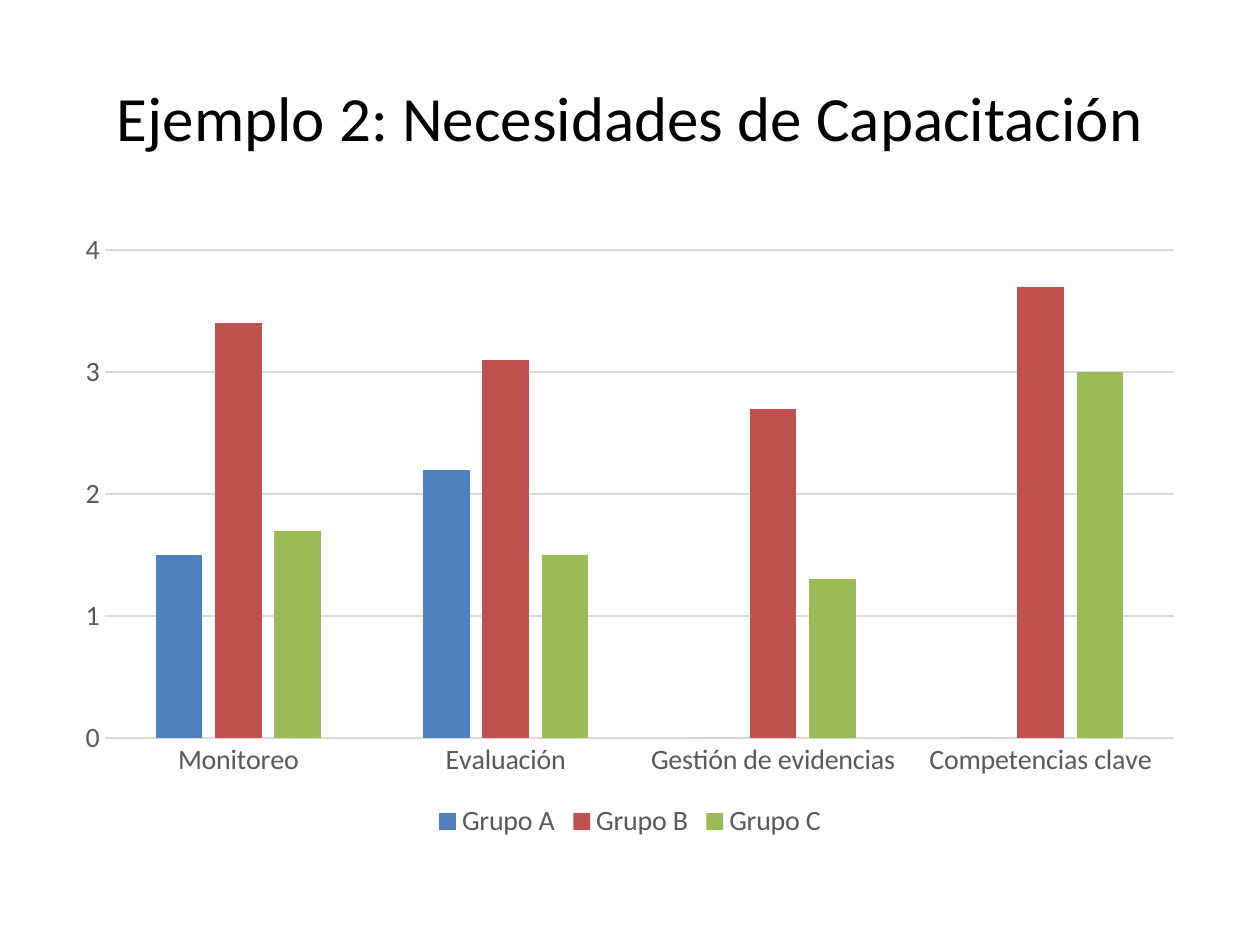
from pptx import Presentation
from pptx.chart.data import CategoryChartData
from pptx.dml.color import RGBColor
from pptx.enum.chart import XL_CHART_TYPE, XL_LEGEND_POSITION, XL_TICK_MARK
from pptx.enum.text import MSO_ANCHOR, PP_ALIGN
from pptx.util import Pt

FACE = "Calibri"
GRAY = "595959"
RULE = "D9D9D9"


def color(code):
    return RGBColor.from_string(code)


def style(font, size, code):
    font.name = FACE
    font.size = Pt(size)
    font.bold = False
    font.color.rgb = color(code)


deck = Presentation()
deck.slide_width, deck.slide_height = Pt(720), Pt(540)
slide = deck.slides.add_slide(deck.slide_layouts[5])

# Title
title = slide.shapes.title
title.left, title.top, title.width, title.height = Pt(36), Pt(21.6), Pt(648), Pt(90)
frame = title.text_frame
frame.word_wrap = True
frame.vertical_anchor = MSO_ANCHOR.MIDDLE
para = frame.paragraphs[0]
para.alignment = PP_ALIGN.CENTER
run = para.add_run()
run.text = "Ejemplo 2: Necesidades de Capacitación"
style(run.font, 36, "000000")

# Chart
groups = [
    ("Grupo A", (1.5, 2.2, 0, 0), "4F81BD"),
    ("Grupo B", (3.4, 3.1, 2.7, 3.7), "C0504D"),
    ("Grupo C", (1.7, 1.5, 1.3, 3), "9BBB59"),
]
data = CategoryChartData()
data.categories = ["Monitoreo", "Evaluación", "Gestión de evidencias", "Competencias clave"]
for name, vals, code in groups:
    data.add_series(name, vals)
chart = slide.shapes.add_chart(
    XL_CHART_TYPE.COLUMN_CLUSTERED, Pt(36), Pt(126), Pt(648), Pt(356.4), data
).chart
chart.has_title = False
style(chart.font, 16, "000000")

plot = chart.plots[0]
plot.vary_by_categories = False
plot.gap_width = 219
plot.overlap = -27
for series, (name, vals, code) in zip(plot.series, groups):
    series.invert_if_negative = False
    series.format.fill.solid()
    series.format.fill.fore_color.rgb = color(code)

# Axes
base, scale = chart.category_axis, chart.value_axis
for axis in (base, scale):
    axis.major_tick_mark = XL_TICK_MARK.NONE
    axis.minor_tick_mark = XL_TICK_MARK.NONE
    style(axis.tick_labels.font, 16, GRAY)
scale.minimum_scale, scale.maximum_scale, scale.major_unit = 0, 4, 1
scale.has_major_gridlines = True
scale.format.line.fill.background()
for line in (base.format.line, scale.major_gridlines.format.line):
    line.width = Pt(0.75)
    line.color.rgb = color(RULE)

# Legend
chart.has_legend = True
chart.legend.position = XL_LEGEND_POSITION.BOTTOM
chart.legend.include_in_layout = False
style(chart.legend.font, 16, GRAY)

deck.save("out.pptx")
